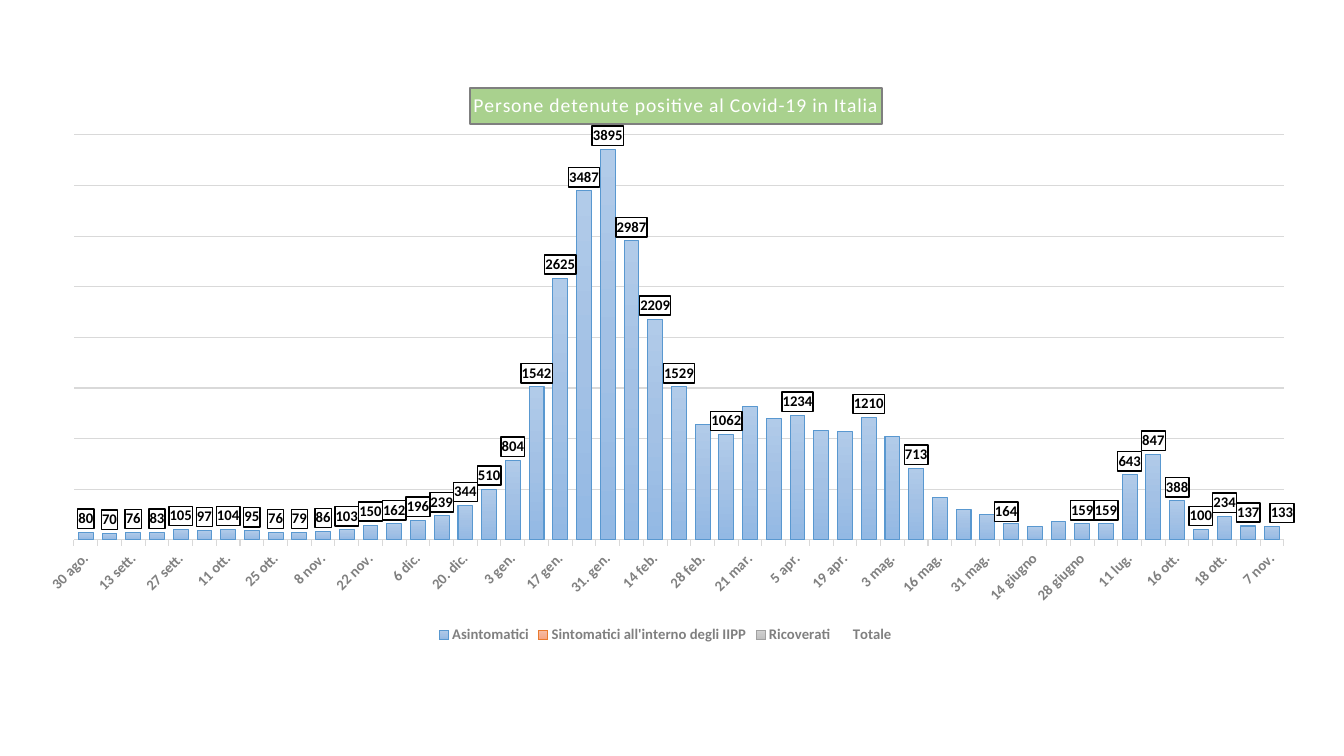
import copy

import pptx
import pptx.chart.data
import pptx.dml.color
import pptx.enum.chart
import pptx.oxml
import pptx.oxml.ns
import pptx.util

COLOURS = {
    "white": "FFFFFF", "black": "000000", "grey": "808080", "grid": "D9D9D9",
    "title_fill": "A9D18E", "title_line": "7F7F7F",
}
WEEKS = [
    "30 ago.", "6 sett.", "13 sett.", "20 sett.", "27 sett.", "4 ott.", "11 ott.", "18 ott.",
    "25 ott.", "1 nov.", "8 nov.", "15 nov.", "22 nov.", "29 nov.", "6 dic.", "13 dic.",
    "20. dic.", "27 dic.", "3 gen.", "10 gen.", "17 gen.", "24 gen.", "31. gen.", "7 feb.",
    "14 feb.", "21 feb.", "28 feb.", " 7 mar.", "21 mar.", "29 mar.", "5 apr.", "12 apr.",
    "19 apr.", "26 apr.", "3 mag.", "10 mag.", "16 mag.", "24 mag.", "31 mag.", "7 giugno",
    "14 giugno", "21 giugno", "28 giugno", "4 luglio", "11 lug.", "18 lug.", "16 ott.",
    "20 set.", "18 ott.", "31 ott.", "7 nov.",
]
ASYMPTOMATIC = [
    75, 66, 71, 76, 100, 93, 100, 90, 71, 74, 81, 98, 146, 158, 193, 236, 339, 501, 786, 1511,
    2586, 3448, 3859, 2953, 2181, 1510, 1138, 1040, 1322, 1199, 1232, 1078, 1068, 1208, 1020,
    707, 417, 300, 254, 164, 130, 177, 158, 158, 642, 846, 385, 100, 233, 137, 130,
]
TOTAL = [
    80, 70, 76, 83, 105, 97, 104, 95, 76, 79, 86, 103, 150, 162, 196, 239, 344, 510, 804, 1542,
    2625, 3487, 3895, 2987, 2209, 1529, 1160, 1062, 1341, 1208, 1234, 1080, 1069, 1210, 1022,
    713, 420, 302, 256, 164, 130, 178, 159, 159, 643, 847, 388, 100, 234, 137, 133,
]
SERIES = {
    "Asintomatici": ASYMPTOMATIC,
    "Sintomatici all'interno degli IIPP": [0] * len(WEEKS),
    "Ricoverati": [0] * len(WEEKS),
    "Totale": TOTAL,
}
BAR_STYLES = [
    (("B1CBE9", "A3C1E5", "93B9E4"), "5998D0"),
    (("F7BDA5", "F5B196", "F8A582"), "E87A30"),
    (("D2D2D2", "C8C8C8", "C0C0C0"), "A1A1A1"),
]
UNLABELLED = [26, 28, 29, 31, 32, 34, 36, 37, 38, 39, 40, 41]


def rgb(name):
    """Return the colour for a palette name or a hex string."""
    return pptx.dml.color.RGBColor.from_string(COLOURS.get(name, name))


def xml(tag, body):
    """Return a chart element with the given tag and inner markup."""
    namespaces = pptx.oxml.ns.nsdecls("c", "a")
    return pptx.oxml.parse_xml(f"<{tag} {namespaces}>{body}</{tag}>")


def find(element, tag):
    """Return the first child of an element with a prefixed tag."""
    return element.find(pptx.oxml.ns.qn(tag))


def format_font(font, size, colour, bold=False):
    """Apply the slide typeface and a text format."""
    font.name = "Calibri"
    font.size = pptx.util.Pt(size)
    font.bold = bold
    font.color.rgb = rgb(colour)


def write_text(text_frame, text, size=14, colour="white", bold=False, spacing=0):
    """Write one formatted run of text."""
    run = text_frame.paragraphs[0].add_run()
    run.text = text
    format_font(run.font, size, colour, bold)
    run.font._element.set("spc", str(spacing))


def format_line(line, colour, width=0.75):
    """Give a line a colour and a width."""
    line.color.rgb = rgb(colour)
    line.width = pptx.util.Pt(width)


def manual_layout(**values):
    """Return a layout element with the given fractions."""
    return xml("c:layout", "<c:manualLayout>" + "".join(
        f'<c:{key} val="{value}"/>' for key, value in values.items()) + "</c:manualLayout>")


class DetaineeSlide:
    """Hold the slide, its scale and its chart style."""

    def __init__(self, presentation):
        """Add a blank slide."""
        self.scale = 914400 / 100.8
        self.small = {"size": 10.5, "colour": "grey", "bold": True}
        presentation.slide_width = self.px(1344)
        presentation.slide_height = self.px(756)
        self.slide = presentation.slides.add_slide(presentation.slide_layouts[6])

    def px(self, length):
        """Turn px into EMU."""
        return pptx.util.Emu(round(length * self.scale))

    def add_chart(self, left, top, width, height):
        """Add the stacked column chart."""
        data = pptx.chart.data.CategoryChartData()
        data.categories = WEEKS
        for name, values in SERIES.items():
            data.add_series(name, values)
        self.box = left, top, width, height
        frame = self.slide.shapes.add_chart(
            pptx.enum.chart.XL_CHART_TYPE.COLUMN_STACKED, *map(self.px, self.box), data)
        self.chart = frame.chart
        format_font(self.chart.font, 10, "black")
        plot = self.chart.plots[0]
        plot.gap_width, plot.overlap, plot.vary_by_categories = 60, 100, False
        return plot.series

    def place(self, left, top):
        """Return a position as fractions of the chart."""
        x, y, width, height = self.box
        return {"xMode": "edge", "yMode": "edge",
                "x": (left - x) / width, "y": (top - y) / height}

    def place_plot(self, left, top, width, height):
        """Fix the inner plot area."""
        area = self.chart._chartSpace.chart.plotArea
        old = find(area, "c:layout")
        if old is not None:
            area.remove(old)
        area.insert(0, manual_layout(layoutTarget="inner", **self.place(left, top),
                                     w=width / self.box[2], h=height / self.box[3]))

    def add_title(self, text, left, top):
        """Add the boxed chart title."""
        title = self.chart.chart_title
        write_text(title.text_frame, text, spacing=50)
        title.include_in_layout = False
        title.format.fill.solid()
        title.format.fill.fore_color.rgb = rgb("title_fill")
        format_line(title.format.line, "title_line", 1.5)
        old = find(title._element, "c:layout")
        if old is not None:
            title._element.remove(old)
        find(title._element, "c:tx").addnext(manual_layout(**self.place(left, top)))

    def format_axes(self):
        """Format the date axis, the grid and the legend."""
        dates, values = self.chart.category_axis, self.chart.value_axis
        format_font(dates.tick_labels.font, **self.small)
        find(dates._element, "c:txPr").bodyPr.set("rot", "-2700000")
        dates.major_tick_mark = pptx.enum.chart.XL_TICK_MARK.OUTSIDE
        format_line(dates.format.line, "grid")
        values.minimum_scale, values.maximum_scale, values.major_unit = 0, 4000, 500
        values.visible = False
        format_line(values.major_gridlines.format.line, "grid")
        self.chart.has_legend = True
        legend = self.chart.legend
        legend.position = pptx.enum.chart.XL_LEGEND_POSITION.BOTTOM
        legend.include_in_layout = False
        format_font(legend.font, **self.small)

    def format_bars(self, series, shades, outline):
        """Fill one series with a vertical gradient."""
        format_line(series.format.line, outline)
        stops = "".join(f'<a:gs pos="{50000 * index}"><a:srgbClr val="{shade}"/></a:gs>'
                        for index, shade in enumerate(shades))
        gradient = xml("a:gradFill", f'<a:gsLst>{stops}</a:gsLst><a:lin ang="5400000"/>')
        find(find(series._element, "c:spPr"), "a:ln").addprevious(gradient)

    def add_labels(self, series, position, show, moved, hidden=()):
        """Add boxed value labels, moving or hiding single ones."""
        labels = series.data_labels
        format_font(labels.font, 10.5, "black", True)
        labels.show_value = show
        labels.position = getattr(pptx.enum.chart.XL_LABEL_POSITION, position)
        element = labels._element
        box = xml("c:spPr", f'<a:solidFill><a:srgbClr val="{COLOURS["white"]}"/></a:solidFill>'
                  f'<a:ln w="12700"><a:solidFill><a:srgbClr val="{COLOURS["black"]}"/>'
                  '</a:solidFill></a:ln>')
        find(element, "c:txPr").addprevious(box)
        flags = "".join(f'<c:show{name} val="{int(name == "Val")}"/>' for name in (
            "LegendKey", "Val", "CatName", "SerName", "Percent", "BubbleSize"))
        for order, index in enumerate(sorted([*hidden, *moved])):
            if index in hidden:
                label = xml("c:dLbl", f'<c:idx val="{index}"/><c:delete val="1"/>')
            else:
                label = xml("c:dLbl", f'<c:idx val="{index}"/>{flags}')
                shift_x, shift_y = moved[index]
                parts = [manual_layout(x=shift_x / self.box[2], y=shift_y / self.box[3])]
                parts += [copy.deepcopy(find(element, tag))
                          for tag in ("c:spPr", "c:txPr", "c:dLblPos")]
                for place, part in enumerate(parts, 1):
                    label.insert(place, part)
            element.insert(order, label)


def main():
    """Build and save the slide."""
    presentation = pptx.Presentation()
    slide = DetaineeSlide(presentation)
    series = slide.add_chart(22, 71, 1287, 577)
    slide.add_title("Persone detenute positive al Covid-19 in Italia", 470, 88)
    slide.place_plot(74, 135, 1210, 405)
    slide.format_axes()
    for bars, (shades, outline) in zip(series, BAR_STYLES):
        slide.format_bars(bars, shades, outline)
    total = series[3]
    total.format.fill.background()
    total.format.line.fill.background()
    slide.add_labels(series[0], "CENTER", False, {39: (-5, -20)})
    slide.add_labels(total, "INSIDE_BASE", True, {50: (10, 0)}, UNLABELLED)
    presentation.save("out.pptx")


if __name__ == "__main__":
    main()
